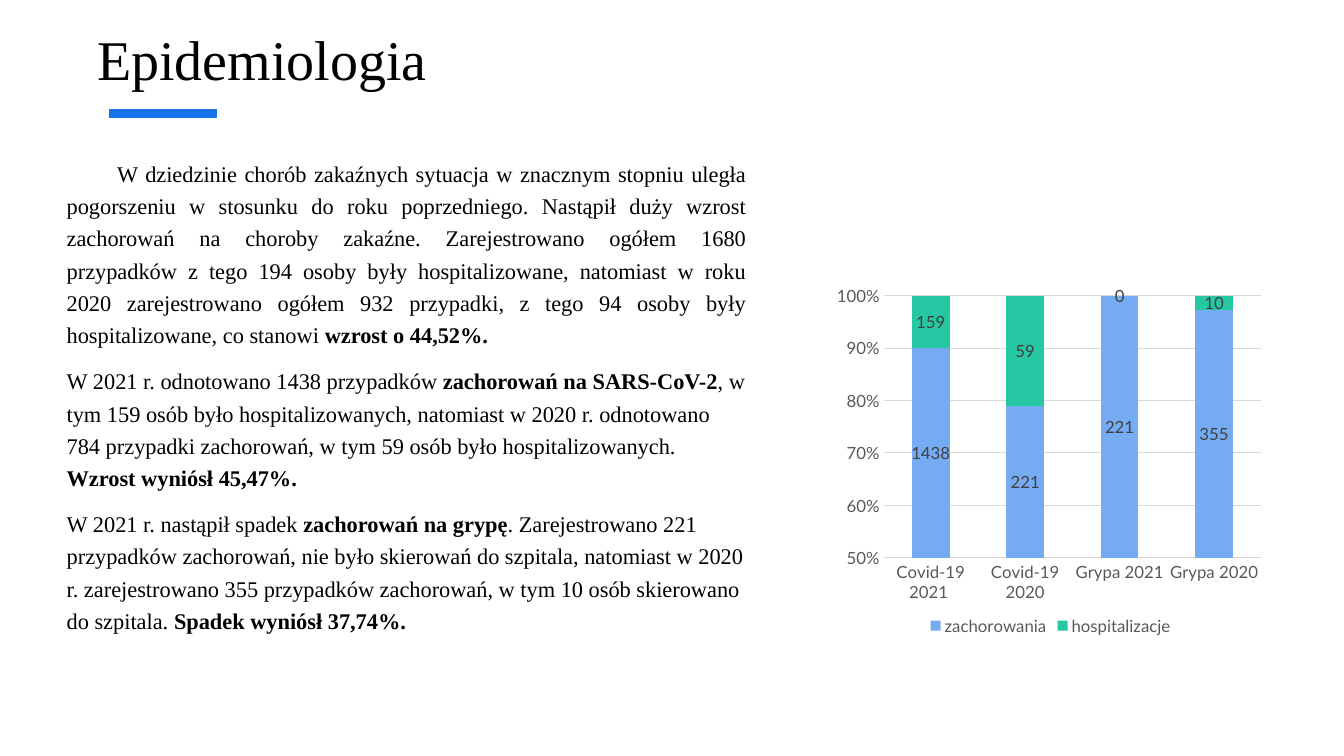
import pptx
import pptx.chart.data
import pptx.dml.color
import pptx.enum.chart
import pptx.enum.shapes
import pptx.enum.text
import pptx.oxml
import pptx.oxml.ns
import pptx.util
from lxml import etree

Cm = pptx.util.Cm
Pt = pptx.util.Pt
Align = pptx.enum.text.PP_ALIGN
Tick = pptx.enum.chart.XL_TICK_MARK


def colour(hex_text):
    return pptx.dml.color.RGBColor.from_string(hex_text)


def apply(target, values):
    for name, value in values.items():
        setattr(target, name, value)


def add_xml(parent, tag, **attributes):
    child = etree.SubElement(parent, pptx.oxml.ns.qn(tag))
    for name, value in attributes.items():
        child.set(name, str(value))
    return child


class Slide:
    serif = "Times New Roman"
    sans = "Lato"
    black = "000000"
    grey = "595959"
    label_grey = "404040"
    grid_grey = "D9D9D9"
    accent = "1973EB"

    def __init__(self, deck):
        self.page = deck.slides.add_slide(deck.slide_layouts[1])

    def font(self, font, name, size, hex_text, bold=False):
        apply(font, {"name": name, "size": Pt(size), "bold": bold})
        font.color.rgb = colour(hex_text)

    def line(self, line, hex_text, width):
        line.color.rgb = colour(hex_text)
        line.width = Pt(width)

    def place(self, box, left, top, width, height, margin_top):
        apply(box, {"left": Cm(left), "top": Cm(top), "width": Cm(width), "height": Cm(height)})
        apply(box.text_frame, {
            "word_wrap": True,
            "auto_size": pptx.enum.text.MSO_AUTO_SIZE.NONE,
            "vertical_anchor": pptx.enum.text.MSO_ANCHOR.TOP,
            "margin_left": Cm(0.25),
            "margin_right": Cm(0.25),
            "margin_top": Cm(margin_top),
        })

    def title(self, text):
        box = self.page.shapes.title
        self.place(box, 2.2, 0.48, 28.78, 3.66, 0.15)
        para = box.text_frame.paragraphs[0]
        para.alignment = Align.LEFT
        span = para.add_run()
        span.text = text
        self.font(span.font, self.serif, 40, self.black)

    def accent_line(self, left, right, level):
        connector = self.page.shapes.add_connector(
            pptx.enum.shapes.MSO_CONNECTOR.STRAIGHT, Cm(left), Cm(level), Cm(right), Cm(level))
        self.line(connector.line, self.accent, 6)
        add_xml(connector.element.spPr, "a:effectLst")

    def body(self, paragraphs):
        box = self.page.placeholders[1]
        self.place(box, 1.43, 3.76, 17.63, 13.54, 0.14)
        frame = box.text_frame
        for index, (alignment, spans) in enumerate(paragraphs):
            para = frame.add_paragraph() if index else frame.paragraphs[0]
            apply(para, {"alignment": alignment, "line_spacing": 1.2, "space_before": Pt(10)})
            properties = para._p.get_or_add_pPr()
            properties.set("marL", "0")
            properties.set("indent", "0")
            add_xml(properties, "a:buNone")
            add_xml(add_xml(properties, "a:tabLst"), "a:tab", pos=int(Cm(2.54)), algn="l")
            for position, text in enumerate(spans):
                span = para.add_run()
                span.text = text
                self.font(span.font, self.serif, 16, self.black, bold=position % 2 == 1)

    def chart(self, categories, series):
        data = pptx.chart.data.CategoryChartData()
        data.categories = categories
        for name, values, _ in series:
            data.add_series(name, values)
        chart = self.page.shapes.add_chart(
            pptx.enum.chart.XL_CHART_TYPE.COLUMN_STACKED_100,
            Cm(20.61), Cm(5.02), Cm(11.84), Cm(11.1), data).chart
        chart.has_title = False
        self.font(chart.font, self.sans, 10, self.black)
        self.legend(chart)
        self.axes(chart)
        plot = chart.plots[0]
        apply(plot, {"gap_width": 150, "overlap": 100, "vary_by_categories": False})
        for item, (_, _, hex_text) in zip(plot.series, series):
            item.format.fill.solid()
            item.format.fill.fore_color.rgb = colour(hex_text)
            labels = item.data_labels
            apply(labels, {"show_value": True, "position": pptx.enum.chart.XL_LABEL_POSITION.CENTER})
            self.font(labels.font, self.sans, 12, self.label_grey)
        self.plot_area(chart, x=0.14, y=0.219, w=0.804, h=0.595)

    def legend(self, chart):
        chart.has_legend = True
        apply(chart.legend, {
            "position": pptx.enum.chart.XL_LEGEND_POSITION.BOTTOM,
            "include_in_layout": False,
        })
        self.font(chart.legend.font, self.sans, 12, self.grey)

    def axes(self, chart):
        for axis in (chart.category_axis, chart.value_axis):
            apply(axis, {"major_tick_mark": Tick.NONE, "minor_tick_mark": Tick.NONE})
            self.font(axis.tick_labels.font, self.sans, 12, self.grey)
        self.line(chart.category_axis.format.line, self.grid_grey, 0.75)
        value_axis = chart.value_axis
        apply(value_axis, {
            "minimum_scale": 0.5, "maximum_scale": 1, "major_unit": 0.1, "has_major_gridlines": True,
        })
        apply(value_axis.tick_labels, {"number_format": "0%", "number_format_is_linked": False})
        value_axis.format.line.fill.background()
        self.line(value_axis.major_gridlines.format.line, self.grid_grey, 0.75)

    def plot_area(self, chart, **sizes):
        area = chart._chartSpace.chart.plotArea
        for old in area.findall(pptx.oxml.ns.qn("c:layout")):
            area.remove(old)
        layout = add_xml(area, "c:layout")
        area.insert(0, layout)
        manual = add_xml(layout, "c:manualLayout")
        add_xml(manual, "c:layoutTarget", val="inner")
        for mode in ("c:xMode", "c:yMode"):
            add_xml(manual, mode, val="edge")
        for name, value in sizes.items():
            add_xml(manual, "c:" + name, val=value)


def main():
    deck = pptx.Presentation()
    apply(deck, {"slide_width": Cm(33.87), "slide_height": Cm(19.05)})
    slide = Slide(deck)
    slide.accent_line(2.75, 5.47, 2.86)
    slide.title("Epidemiologia")
    slide.body([
        (Align.JUSTIFY, [
            "\tW dziedzinie chorób zakaźnych sytuacja w znacznym stopniu uległa pogorszeniu "
            "w stosunku do roku poprzedniego. Nastąpił duży wzrost zachorowań na choroby zakaźne. "
            "Zarejestrowano ogółem 1680 przypadków z tego 194 osoby były hospitalizowane, "
            "natomiast w roku 2020 zarejestrowano ogółem 932 przypadki, z tego 94 osoby były "
            "hospitalizowane, co stanowi ",
            "wzrost o 44,52%.",
        ]),
        (Align.LEFT, [
            "W 2021 r. odnotowano 1438 przypadków ",
            "zachorowań na SARS-CoV-2",
            ", w tym 159 osób było hospitalizowanych, natomiast w 2020 r. odnotowano "
            "784 przypadki zachorowań, w tym 59 osób było hospitalizowanych. ",
            "Wzrost wyniósł 45,47%.",
        ]),
        (Align.LEFT, [
            "W 2021 r. nastąpił spadek ",
            "zachorowań na grypę",
            ". Zarejestrowano 221 przypadków zachorowań, nie było skierowań do szpitala, "
            "natomiast w 2020 r. zarejestrowano 355 przypadków zachorowań, w tym 10 osób "
            "skierowano do szpitala. ",
            "Spadek wyniósł 37,74%.",
        ]),
    ])
    slide.chart(
        ["Covid-19 2021 ", "Covid-19 2020", "Grypa 2021", "Grypa 2020"],
        [
            ("zachorowania", (1438, 221, 221, 355), "75ABF3"),
            ("hospitalizacje ", (159, 59, 0, 10), "25C8A2"),
        ])
    deck.save("out.pptx")


if __name__ == "__main__":
    main()
